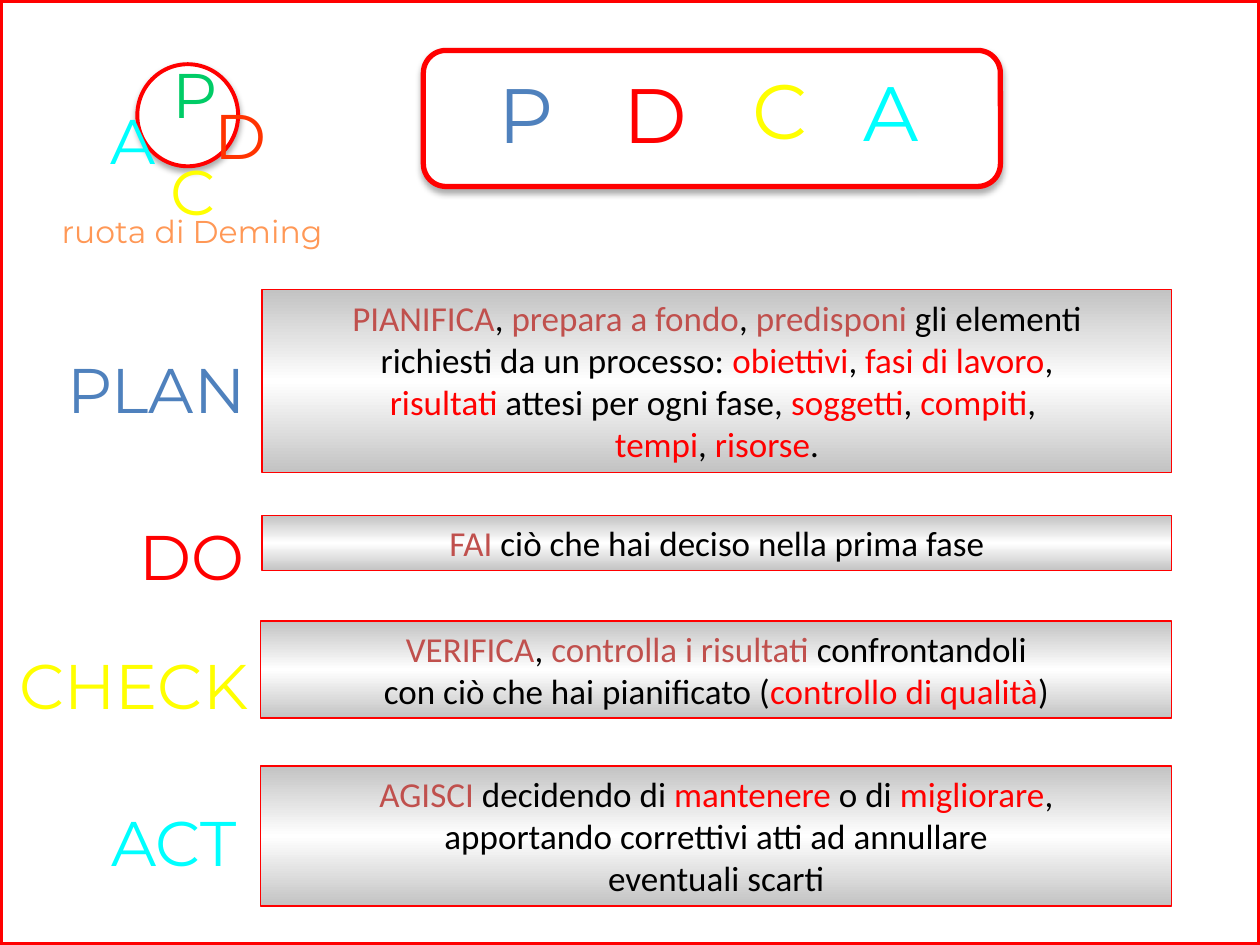
from copy import deepcopy

from lxml.etree import SubElement
from pptx import Presentation
from pptx.dml.color import RGBColor
from pptx.enum.shapes import MSO_SHAPE
from pptx.enum.text import MSO_ANCHOR, PP_ALIGN
from pptx.oxml.ns import qn
from pptx.util import Inches, Pt

COLORS = {
    "white": "FFFFFF", "black": "000000", "red": "FF0000", "brick": "C0504D",
    "blue": "4F81BD", "yellow": "FFFF00", "cyan": "00FFFF", "green": "00CC66",
    "vermilion": "FF3300", "orange": "FF9856", "silver": "C3C3C3",
}

STEPS = [
    ("PLAN", "blue", (0.44, 2.73, 1.6, 0.7), (2.08, 2.3, 7.22, 1.45), [
        [("PIANIFICA", "brick"), (", ", "black"), ("prepara a fondo", "brick"),
         (", ", "black"), ("predisponi", "brick"), (" gli elementi", "black")],
        [("richiesti da un processo: ", "black"), ("obiettivi", "red"),
         (", ", "black"), ("fasi di lavoro", "red"), (",", "black")],
        [("risultati", "red"), (" attesi per ogni fase, ", "black"),
         ("soggetti", "red"), (", ", "black"), ("compiti", "red"), (", ", "black")],
        [("tempi", "red"), (", ", "black"), ("risorse", "red"), (".", "black")],
    ]),
    ("DO", "red", (1.02, 4.06, 1, 0.7), (2.08, 4.09, 7.22, 0.44), [
        [("FAI", "brick"), (" ciò che hai deciso nella prima fase", "black")],
    ]),
    ("CHECK", "yellow", (0.06, 5.08, 2, 0.7), (2.07, 4.93, 7.23, 0.77), [
        [("VERIFICA", "brick"), (", ", "black"), ("controlla i risultati", "brick"),
         (" confrontandoli", "black")],
        [("con ciò che hai pianificato (", "black"),
         ("controllo di qualità", "red"), (")", "black")],
    ]),
    ("ACT", "cyan", (0.78, 6.33, 1.2, 0.7), (2.07, 6.08, 7.23, 1.11), [
        [("AGISCI ", "brick"), ("decidendo di ", "black"), ("mantenere", "red"),
         (" o di ", "black"), ("migliorare", "red"), (",", "black")],
        [("apportando correttivi atti ad annullare", "black")],
        [("eventuali scarti", "black")],
    ]),
]


def rgb(name):
    return RGBColor.from_string(COLORS[name])


def place(box):
    return [Inches(length) for length in box]


def add_run(paragraph, words, color, size, font):
    run = paragraph.add_run()
    run.text = words
    run.font.size = Pt(size)
    run.font.name = font
    run.font.color.rgb = rgb(color)


def add_label(slide, box, words, color, size):
    label = slide.shapes.add_textbox(*place(box))
    frame = label.text_frame
    frame.word_wrap = True
    frame.margin_left = frame.margin_right = 0
    paragraph = frame.paragraphs[0]
    paragraph.alignment = PP_ALIGN.CENTER
    add_run(paragraph, words, color, size, "Montserrat")


def add_letters(slide, left, top, letters, width, height, size):
    for letter, color, center, dy in letters:
        box = (left + center - width / 2, top + dy, width, height)
        add_label(slide, box, letter, color, size)


def add_outlined(slide, preset, box, line_width, fill=None):
    outlined = slide.shapes.add_shape(preset, *place(box))
    outlined.shadow.inherit = False
    if fill:
        outlined.fill.solid()
        outlined.fill.fore_color.rgb = rgb(fill)
    else:
        outlined.fill.background()
    outlined.line.color.rgb = rgb("red")
    outlined.line.width = Pt(line_width)
    return outlined


def cast_shadow(outlined):
    effects = outlined._element.spPr.find(qn("a:effectLst"))
    shadow = SubElement(effects, qn("a:outerShdw"), blurRad=str(Pt(3.5)),
                        dist=str(Pt(2.2)), dir="5400000", rotWithShape="0")
    tint = SubElement(shadow, qn("a:srgbClr"), val=COLORS["black"])
    SubElement(tint, qn("a:alpha"), val="32000")


def fill_metallic(panel):
    panel.fill.gradient()
    panel.fill.gradient_angle = 90
    stops = panel._element.spPr.find(qn("a:gradFill")).find(qn("a:gsLst"))
    stops.insert(1, deepcopy(stops[0]))
    shades = [(0, "silver"), (0.5, "white"), (1, "silver")]
    for stop, (position, shade) in zip(panel.fill.gradient_stops, shades):
        stop.position = position
        stop.color.rgb = rgb(shade)


def add_acronym(slide, box):
    cast_shadow(add_outlined(slide, MSO_SHAPE.ROUNDED_RECTANGLE, box, 3, "white"))
    letters = [("P", "blue", 0.82, 0.08), ("D", "red", 1.84, 0.08),
               ("C", "yellow", 2.83, 0.05), ("A", "cyan", 3.71, 0.06)]
    add_letters(slide, box[0], box[1], letters, 0.7, 0.86, 44)


def add_deming_wheel(slide, box):
    left, top, width, height = box
    add_label(slide, (left, top + height - 0.31, width, 0.31),
              "ruota di Deming", "orange", 18)
    wheel = (left + 0.7, top + 0.12, 0.8, 0.81)
    cast_shadow(add_outlined(slide, MSO_SHAPE.OVAL, wheel, 2.25, "white"))
    letters = [("A", "cyan", 0.67, 0.37), ("P", "green", 1.16, 0),
               ("D", "vermilion", 1.52, 0.33), ("C", "yellow", 1.14, 0.77)]
    add_letters(slide, left, top, letters, 0.6, 0.7, 36)


def add_step(slide, name, color, name_box, panel_box, lines):
    add_label(slide, name_box, name, color, 36)
    panel = add_outlined(slide, MSO_SHAPE.RECTANGLE, panel_box, 0.75)
    fill_metallic(panel)
    frame = panel.text_frame
    frame.word_wrap = True
    frame.vertical_anchor = MSO_ANCHOR.TOP
    for index, line in enumerate(lines):
        paragraph = frame.add_paragraph() if index else frame.paragraphs[0]
        paragraph.alignment = PP_ALIGN.CENTER
        for words, word_color in line:
            add_run(paragraph, words, word_color, 20, "Calibri")


def main():
    deck = Presentation()
    deck.slide_width, deck.slide_height = Inches(10), Inches(7.5)
    slide = deck.slides.add_slide(deck.slide_layouts[6])
    add_acronym(slide, (3.36, 0.4, 4.58, 1.08))
    add_deming_wheel(slide, (0.39, 0.39, 2.27, 1.55))
    add_outlined(slide, MSO_SHAPE.RECTANGLE, (0, 0, 10, 7.5), 3)
    for step in STEPS:
        add_step(slide, *step)
    deck.save("out.pptx")


if __name__ == "__main__":
    main()
